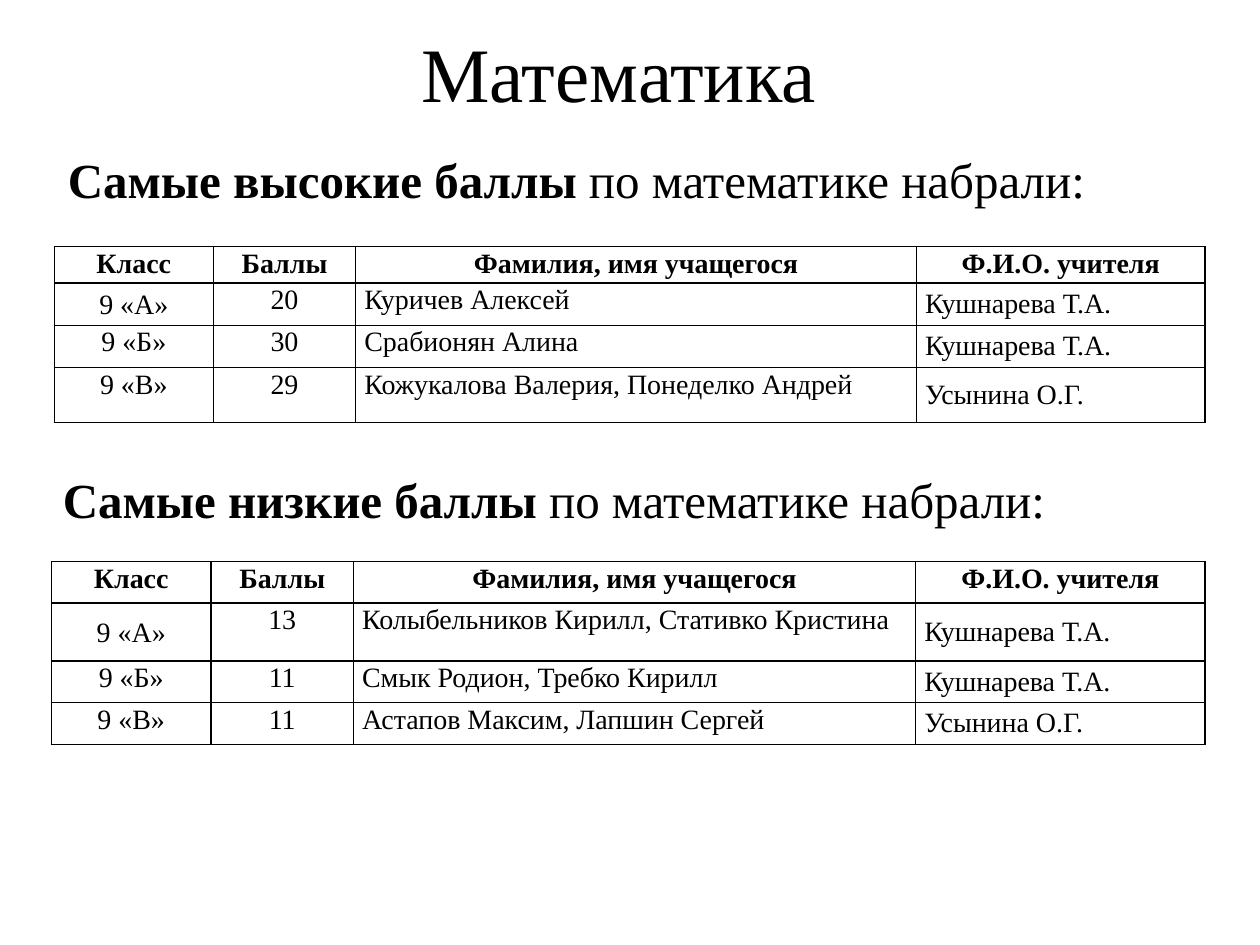
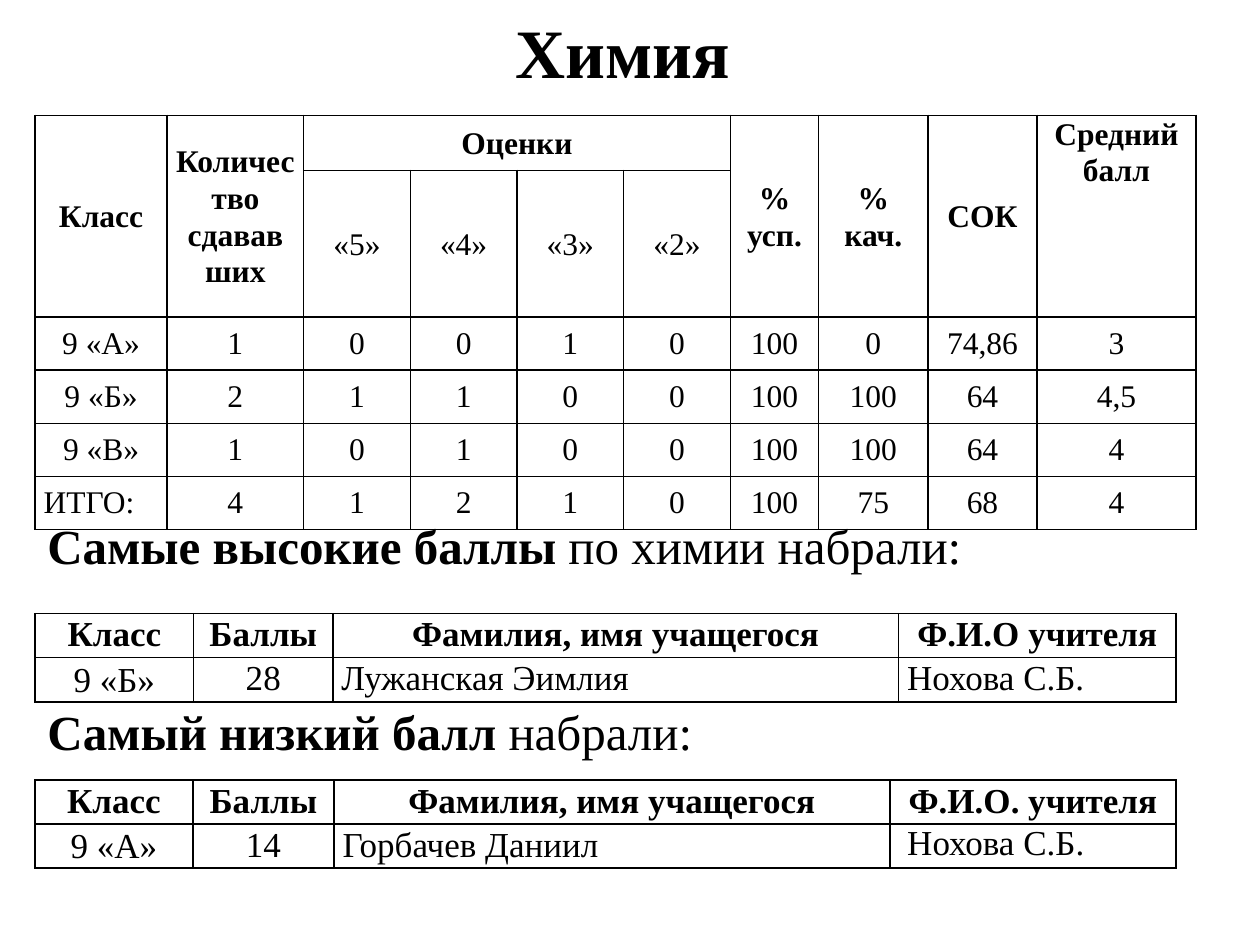
from dataclasses import dataclass, replace

from lxml.etree import SubElement
from pptx import Presentation
from pptx.dml.color import RGBColor as RGB
from pptx.enum.text import MSO_ANCHOR as ANCHOR, MSO_AUTO_SIZE as AUTO, PP_ALIGN as ALIGN
from pptx.oxml.ns import qn
from pptx.util import Pt


@dataclass(frozen=True)
class Theme:
    font: str = "Times New Roman"
    ink: RGB = RGB(0, 0, 0)
    paper: RGB = RGB(255, 255, 255)
    title: float = 44
    bold_title: float = 39.6
    heading: float = 28
    small: float = 16
    grades: float = 18
    large: float = 20
    border: float = 1
    cell_inset: float = 4.95


@dataclass(frozen=True)
class CellStyle:
    align: ALIGN = ALIGN.CENTER
    anchor: ANCHOR = ANCHOR.TOP
    spacing: float = 1.05
    bold: bool = False


THEME = Theme()

# Cell styles
TOP = CellStyle()
MIDDLE = replace(TOP, anchor=ANCHOR.MIDDLE)
HEAD = replace(TOP, bold=True)
HEAD_MIDDLE = replace(MIDDLE, bold=True)
NUMBER = replace(MIDDLE, spacing=1.0)
TOTAL = replace(NUMBER, align=ALIGN.JUSTIFY)
PUPIL = replace(TOP, align=ALIGN.JUSTIFY)
TEACHER = replace(TOP, align=ALIGN.LEFT)
TEACHER_TIGHT = replace(TEACHER, spacing=1.0)
TEACHER_MIDDLE = replace(TEACHER_TIGHT, anchor=ANCHOR.MIDDLE)


def add_run(p, text, size, bold=False):
    r = p.add_run()
    r.text = text
    r.font.name = THEME.font
    r.font.size = Pt(size)
    r.font.bold = bold
    r.font.color.rgb = THEME.ink


def add_titled_slide(prs, text, box, size, bold=False):
    slide = prs.slides.add_slide(prs.slide_layouts[5])
    slide.background.fill.solid()
    slide.background.fill.fore_color.rgb = THEME.paper
    sp = slide.shapes.title
    sp.left, sp.top, sp.width, sp.height = map(Pt, box)
    tf = sp.text_frame
    tf.auto_size = AUTO.NONE
    tf.vertical_anchor = ANCHOR.MIDDLE
    p = tf.paragraphs[0]
    p.alignment = ALIGN.CENTER
    add_run(p, text, size, bold)
    return slide


def add_heading(slide, left, top, width, strong, rest):
    tf = slide.shapes.add_textbox(Pt(left), Pt(top), Pt(width), Pt(41)).text_frame
    tf.word_wrap = True
    tf.auto_size = AUTO.SHAPE_TO_FIT_TEXT
    p = tf.paragraphs[0]
    p.alignment = ALIGN.JUSTIFY
    add_run(p, strong, THEME.heading, bold=True)
    add_run(p, rest, THEME.heading)


def frame_cell(cell):
    """Clear the fill and draw all four borders."""
    cell.fill.background()
    props = cell._tc.get_or_add_tcPr()
    for i, side in enumerate(("a:lnL", "a:lnR", "a:lnT", "a:lnB")):
        ln = SubElement(props, qn(side), w=str(Pt(THEME.border)))
        color = SubElement(SubElement(ln, qn("a:solidFill")), qn("a:srgbClr"))
        color.set("val", str(THEME.ink))
        props.insert(i, ln)


def write_cell(cell, text, style, size):
    cell.vertical_anchor = style.anchor
    tf = cell.text_frame
    for i, line in enumerate(text.split("\n")):
        p = tf.add_paragraph() if i else tf.paragraphs[0]
        p.alignment = style.align
        p.line_spacing = style.spacing
        add_run(p, line, size, style.bold)


def add_grid(slide, left, top, widths, heights, size, rows):
    """Rows hold (text, style) pairs; None marks a cell covered by a merge."""
    frame = slide.shapes.add_table(len(heights), len(widths), Pt(left), Pt(top),
                                   Pt(sum(widths)), Pt(sum(heights)))
    table = frame.table
    table.first_row = table.horz_banding = False
    for column, width in zip(table.columns, widths):
        column.width = Pt(width)
    for row, height, items in zip(table.rows, heights, rows):
        row.height = Pt(height)
        for cell, item in zip(row.cells, items):
            frame_cell(cell)
            cell.margin_left = cell.margin_right = Pt(THEME.cell_inset)
            cell.margin_top = cell.margin_bottom = 0
            if item:
                write_cell(cell, *item, size)
    return table


def add_score_table(slide, left, top, widths, heights, size, records,
                    teacher_style, teacher_head="Ф.И.О. учителя"):
    heads = ("Класс", "Баллы", "Фамилия, имя учащегося", teacher_head)
    rows = [[(head, HEAD) for head in heads]]
    for i, record in enumerate(records):
        styles = (TOP if i else MIDDLE, TOP, PUPIL, teacher_style)
        rows.append(list(zip(record, styles)))
    add_grid(slide, left, top, widths, heights, size, rows)


def add_grades_table(slide):
    heads = ["Класс", "Количество сдававших", "Оценки", None, None, None,
             "%\nусп.", "%\nкач.", "СОК", "Средний балл"]
    marks = ["«5»", "«4»", "«3»", "«2»"]
    results = [
        ("9 «А»", "1", "0", "0", "1", "0", "100", "0", "74,86", "3"),
        ("9 «Б»", "2", "1", "1", "0", "0", "100", "100", "64", "4,5"),
        ("9 «В»", "1", "0", "1", "0", "0", "100", "100", "64", "4"),
        ("ИТГО:", "4", "1", "2", "1", "0", "100", "75", "68", "4"),
    ]
    rows = [[head and (head, HEAD_MIDDLE) for head in heads],
            [None] * 2 + [(mark, MIDDLE) for mark in marks] + [None] * 4]
    rows += [[(value, NUMBER) for value in result] for result in results]
    rows[0][-1] = (heads[-1], HEAD)
    rows[-1][0] = (results[-1][0], TOTAL)

    widths = [75.5, 78] + [61] * 4 + [50.5, 62.4, 62.4, 90.7]
    table = add_grid(slide, 20, 66, widths, [31.4, 83.8] + [30.4] * 4, THEME.grades, rows)

    # Header cells: marks span four columns, the others span two rows
    table.cell(0, 2).merge(table.cell(0, 5))
    for col in (0, 1, 6, 7, 8, 9):
        table.cell(0, col).merge(table.cell(1, col))


def build_maths(prs):
    slide = add_titled_slide(prs, "Математика", (29.5, 10, 648, 62), THEME.title)
    add_heading(slide, 31.7, 82, 669, "Самые высокие баллы", " по математике набрали:")
    add_score_table(slide, 31, 141, [90.9, 81.4, 320.4, 165], [20.7, 24.2, 24.2, 31.4],
                    THEME.small, [
                        ("9 «А»", "20", "Куричев Алексей", "Кушнарева Т.А."),
                        ("9 «Б»", "30", "Срабионян Алина", "Кушнарева Т.А."),
                        ("9 «В»", "29", "Кожукалова Валерия, Понеделко Андрей", "Усынина О.Г."),
                    ], TEACHER_MIDDLE)
    add_heading(slide, 28.8, 265, 612, "Самые низкие баллы ", "по математике набрали:")
    add_score_table(slide, 29.4, 321, [91.2, 81.4, 321.3, 165.4], [23.7, 32.9, 23.9, 23.9],
                    THEME.small, [
                        ("9 «А»", "13", "Колыбельников Кирилл, Стативко Кристина", "Кушнарева Т.А."),
                        ("9 «Б»", "11", "Смык Родион, Требко Кирилл", "Кушнарева Т.А."),
                        ("9 «В»", "11", "Астапов Максим, Лапшин Сергей", "Усынина О.Г."),
                    ], TEACHER_MIDDLE)


def build_chemistry(prs):
    slide = add_titled_slide(prs, "Химия", (31.7, 9.4, 648, 39), THEME.bold_title, bold=True)
    add_grades_table(slide)
    add_heading(slide, 20, 291, 543, "Самые высокие баллы ", "по химии набрали:")
    add_score_table(slide, 20, 350.6, [90.7, 79.5, 323.3, 158.6], [25.2] * 2, THEME.large,
                    [("9 «Б»", "28", "Лужанская Эимлия", "Нохова С.Б.")],
                    TEACHER, "Ф.И.О учителя")
    add_heading(slide, 20, 397.4, 387.4, "Самый низкий балл", " набрали:")
    add_score_table(slide, 20, 445.6, [90.2, 80.6, 317.7, 163.6], [25.2] * 2, THEME.large,
                    [("9 «А»", "14", "Горбачев Даниил", " Нохова С.Б.")], TEACHER_TIGHT)


def main():
    prs = Presentation()
    prs.slide_width, prs.slide_height = Pt(720), Pt(540)
    build_maths(prs)
    build_chemistry(prs)
    prs.save("out.pptx")


if __name__ == "__main__":
    main()
